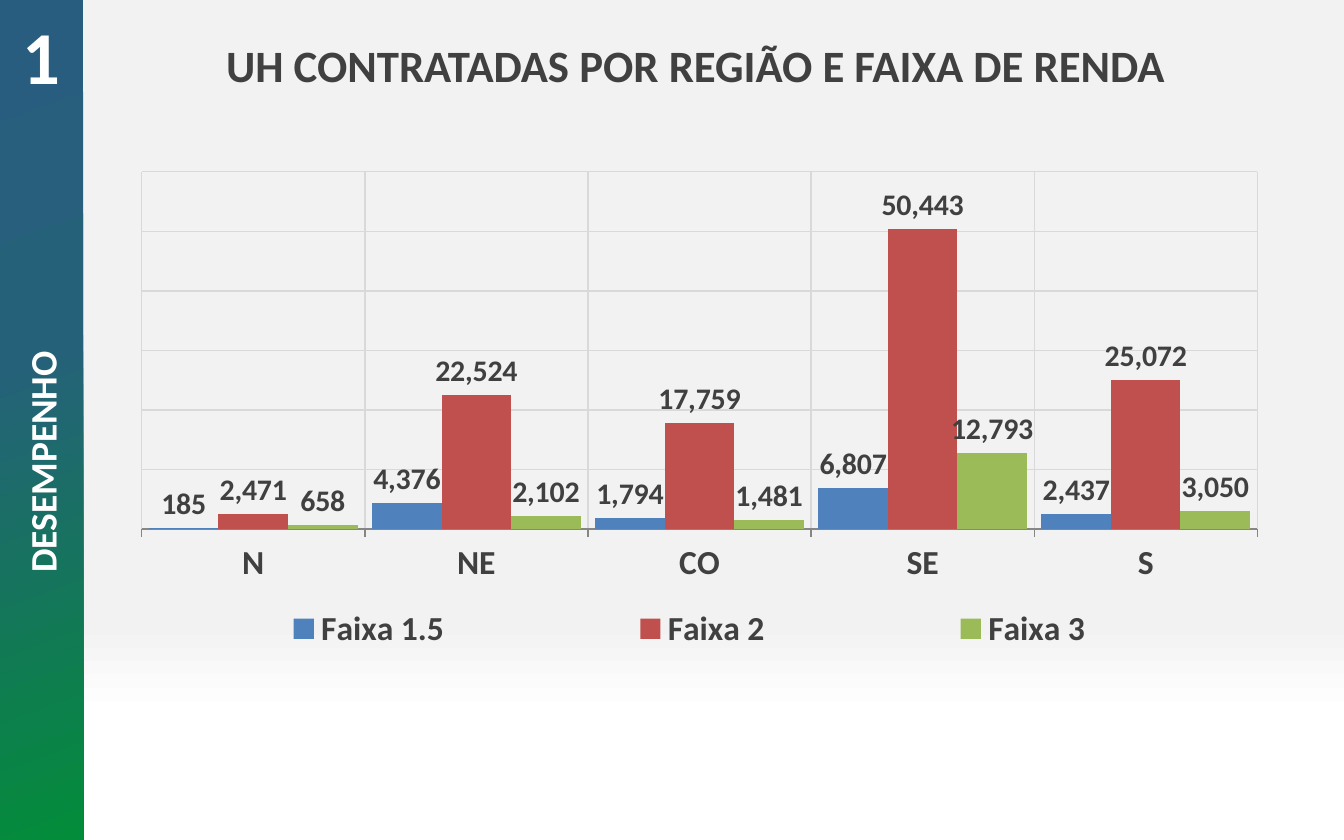
from copy import deepcopy
from dataclasses import dataclass

from lxml.etree import SubElement
from pptx import Presentation
from pptx.chart.data import CategoryChartData
from pptx.dml.color import RGBColor
from pptx.enum.chart import (XL_CHART_TYPE, XL_LABEL_POSITION,
                             XL_LEGEND_POSITION, XL_TICK_MARK)
from pptx.enum.shapes import MSO_SHAPE
from pptx.enum.text import MSO_ANCHOR, PP_ALIGN
from pptx.oxml.ns import qn
from pptx.util import Pt


@dataclass(frozen=True)
class Theme:
    font: str = "Calibri"
    ink: str = "404040"
    light: str = "FFFFFF"
    grid: str = "D9D9D9"
    axis: str = "868686"
    series: tuple = ("4F81BD", "C0504D", "9BBB59")
    backdrop: tuple = ((0, "F2F2F2"), (74, "F2F2F2"), (85, "FFFFFF"), (100, "FFFFFF"))
    sidebar: tuple = ((0, "285D7F"), (42, "256179"), (100, "038C3A"))
    number_size: int = 40
    title_size: int = 24
    section_size: int = 20
    chart_size: int = 18
    label_size: int = 16


@dataclass(frozen=True)
class Box:
    left: float
    top: float
    width: float
    height: float

    def inner(self, left, top, width, height):
        return Box(self.left + left, self.top + top, width, height)

    def lengths(self):
        return Pt(self.left), Pt(self.top), Pt(self.width), Pt(self.height)


THEME = Theme()
REGIONS = ("N", "NE", "CO", "SE", "S")
UNITS = {
    "Faixa 1.5": (185, 4376, 1794, 6807, 2437),
    "Faixa 2": (2471, 22524, 17759, 50443, 25072),
    "Faixa 3": (658, 2102, 1481, 12793, 3050),
}


def rgb(color):
    return RGBColor.from_string(color)


def style_font(font, size, color):
    font.name = THEME.font
    font.size = Pt(size)
    font.bold = True
    font.color.rgb = rgb(color)


def apply_gradient(fill, element, stops, clockwise):
    fill.gradient()
    fill.gradient_angle = 360 - clockwise
    stop_list = next(element.iter(qn("a:gsLst")))
    pattern = deepcopy(stop_list[0])
    for old in list(stop_list):
        stop_list.remove(old)
    for _ in stops:
        stop_list.append(deepcopy(pattern))
    for stop, (percent, color) in zip(fill.gradient_stops, stops):
        stop.position = percent / 100
        stop.color.rgb = rgb(color)


def add_label(slide, box, words, size, color, rotation=0):
    label = slide.shapes.add_textbox(*box.lengths())
    label.rotation = rotation
    frame = label.text_frame
    frame.word_wrap = True
    frame.vertical_anchor = MSO_ANCHOR.MIDDLE
    frame.margin_left = frame.margin_right = Pt(0)
    frame.text = words
    paragraph = frame.paragraphs[0]
    paragraph.alignment = PP_ALIGN.CENTER
    style_font(paragraph.runs[0].font, size, color)


def set_layout(parent, index, fractions, target=None):
    """Place a chart part by fractions of the chart area."""
    for old in parent.findall(qn("c:layout")):
        parent.remove(old)
    layout = parent.makeelement(qn("c:layout"))
    parent.insert(index, layout)
    manual = SubElement(layout, qn("c:manualLayout"))
    settings = [("layoutTarget", target)] if target else []
    settings += [("xMode", "edge"), ("yMode", "edge")]
    settings += zip("xywh", fractions)
    for tag, value in settings:
        SubElement(manual, qn(f"c:{tag}")).set("val", str(value))


def add_sidebar(slide, box):
    panel = slide.shapes.add_shape(MSO_SHAPE.RECTANGLE, *box.lengths())
    panel.shadow.inherit = False
    panel.line.fill.background()
    apply_gradient(panel.fill, panel._element, THEME.sidebar, 70)

    # Section name, read from bottom to top
    length, thickness = 380, 31
    section = box.inner((box.width - length) / 2, 232, length, thickness)
    add_label(slide, section, "DESEMPENHO", THEME.section_size, THEME.light, 270)

    # Section number
    add_label(slide, box.inner(0, 0, box.width, 59), "1",
              THEME.number_size, THEME.light)


def add_units_chart(slide, box):
    data = CategoryChartData(number_format="#,##0")
    data.categories = REGIONS
    for band, units in UNITS.items():
        data.add_series(band, units)
    chart = slide.shapes.add_chart(
        XL_CHART_TYPE.COLUMN_CLUSTERED, *box.lengths(), data).chart
    chart.has_title = False
    style_font(chart.font, THEME.chart_size, THEME.ink)

    # Axes and grid
    regions, units = chart.category_axis, chart.value_axis
    units.minimum_scale, units.maximum_scale, units.major_unit = 0, 60000, 10000
    units.visible = False
    for axis in (regions, units):
        axis.has_major_gridlines = True
        grid = axis.major_gridlines.format.line
        grid.color.rgb = rgb(THEME.grid)
        grid.width = Pt(0.75)
    regions.major_tick_mark = XL_TICK_MARK.OUTSIDE
    regions.format.line.color.rgb = rgb(THEME.axis)
    style_font(regions.tick_labels.font, THEME.chart_size, THEME.ink)

    # Columns and their values
    plot = chart.plots[0]
    plot.gap_width = 21
    plot.overlap = 0
    plot.vary_by_categories = False
    for series, color in zip(plot.series, THEME.series):
        series.format.fill.solid()
        series.format.fill.fore_color.rgb = rgb(color)
        labels = series.data_labels
        labels.show_value = True
        labels.position = XL_LABEL_POSITION.OUTSIDE_END
        labels.number_format = "#,##0"
        labels.number_format_is_linked = False
        style_font(labels.font, THEME.label_size, THEME.ink)

    # Legend and plot positions
    chart.has_legend = True
    legend = chart.legend
    legend.position = XL_LEGEND_POSITION.BOTTOM
    legend.include_in_layout = False
    style_font(legend.font, THEME.chart_size, THEME.ink)
    set_layout(legend._element, 1, (0, 0.87, 0.99, 0.12))
    plot_area = next(chart._chartSpace.iter(qn("c:plotArea")))
    set_layout(plot_area, 0, (0.028, 0.054, 0.951, 0.685), "inner")


def add_content(slide, box):
    add_label(slide, box.inner(65.5, 16.5, 525, 36),
              "UH CONTRATADAS POR REGIÃO E FAIXA DE RENDA",
              THEME.title_size, THEME.ink)
    add_units_chart(slide, box.inner(13.7, 77, 628.5, 279.4))


def main():
    deck = Presentation()
    deck.slide_width, deck.slide_height = Pt(720), Pt(450)
    slide = deck.slides.add_slide(deck.slide_layouts[6])
    apply_gradient(slide.background.fill, slide._element, THEME.backdrop, 90)
    sidebar_width = 44.6
    add_sidebar(slide, Box(0, 0, sidebar_width, 450))
    add_content(slide, Box(sidebar_width, 0, 720 - sidebar_width, 450))
    deck.save("out.pptx")


if __name__ == "__main__":
    main()
